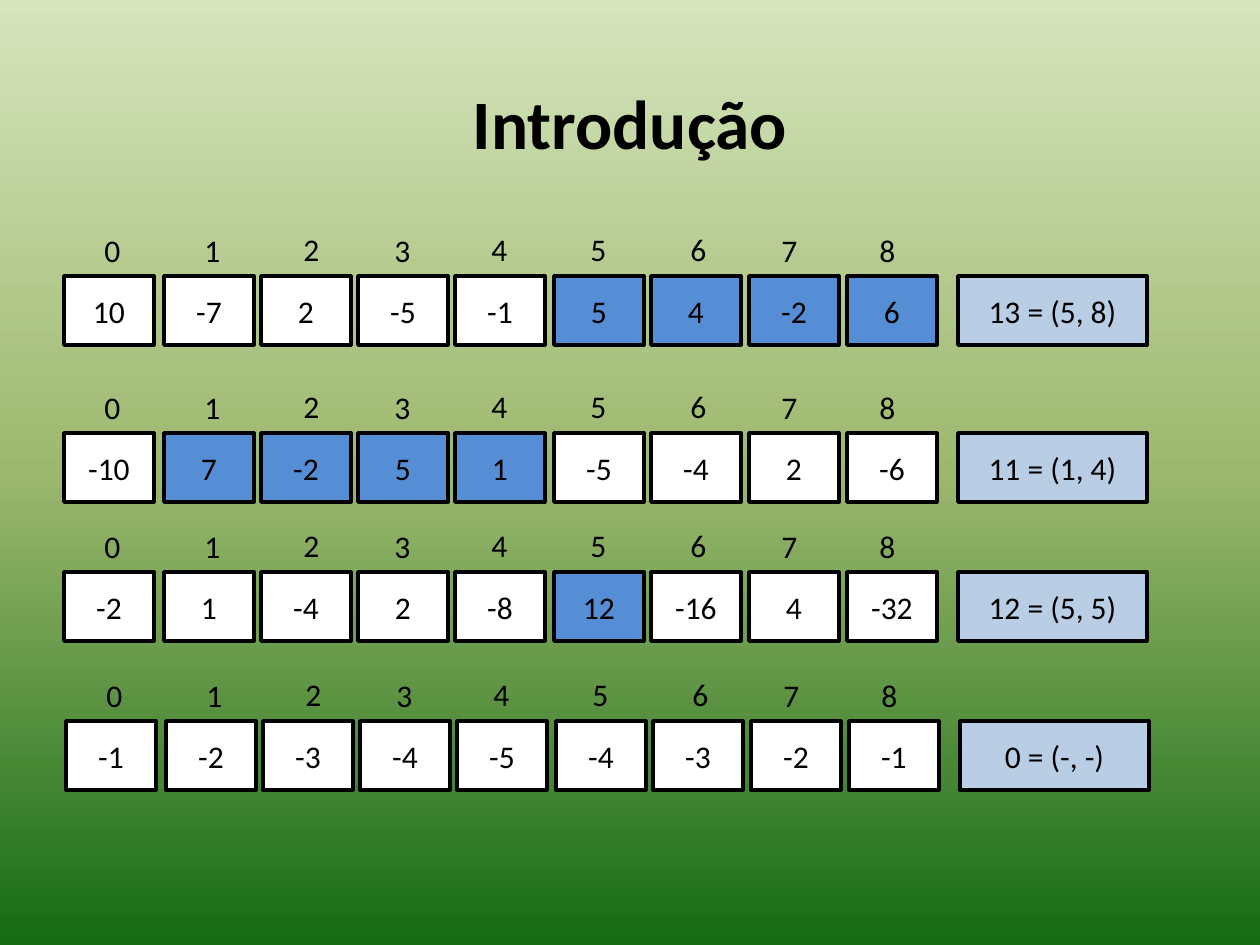
from copy import deepcopy

from pptx import Presentation
from pptx.dml.color import RGBColor
from pptx.enum.shapes import MSO_SHAPE
from pptx.enum.text import MSO_ANCHOR, MSO_AUTO_SIZE, PP_ALIGN
from pptx.util import Pt

RECTANGLE = MSO_SHAPE.RECTANGLE
MIDDLE = MSO_ANCHOR.MIDDLE
GROW = MSO_AUTO_SIZE.SHAPE_TO_FIT_TEXT
CENTER, LEFT = PP_ALIGN.CENTER, PP_ALIGN.LEFT

EMU_PER_PX = 914400 // 126
SLIDE_WIDTH, SLIDE_HEIGHT = 9144000, 6858000

COLORS = {
    "text": "000000",
    "cell": "FFFFFF",
    "chosen": "558ED5",
    "result": "B9CDE5",
    "sky": "D7E4BD",
    "meadow": "9CB86E",
    "forest": "156B13",
}
BACKGROUND_STOPS = [(0, "sky"), (0.5, "meadow"), (1, "forest")]

# Each column: cell left, index left, rise of the index above the cell
COLUMNS = [
    (64, 92, 51), (164, 192, 51), (261, 291, 52),
    (358, 382, 51), (455, 479, 52), (554, 578, 52),
    (651, 678, 52), (749, 769, 51), (847, 867, 51),
]
CELL_WIDTH, CELL_HEIGHT = 90, 69
INDEX_WIDTH, INDEX_HEIGHT = 42, 50
RESULT_LEFT, RESULT_WIDTH = 958, 189

# Each row: top, shift to the right, values, chosen columns, result
ROWS = [
    (276, 0, [10, -7, 2, -5, -1, 5, 4, -2, 6], range(5, 9), "13 = (5, 8)"),
    (433, 0, [-10, 7, -2, 5, 1, -5, -4, 2, -6], range(1, 5), "11 = (1, 4)"),
    (572, 0, [-2, 1, -4, 2, -8, 12, -16, 4, -32], range(5, 6), "12 = (5, 5)"),
    (721, 2, [-1, -2, -3, -4, -5, -4, -3, -2, -1], range(0), "0 = (-, -)"),
]


def px(length):
    return length * EMU_PER_PX


class SlideBuilder:
    font = "Calibri"
    text_size = 18
    title_size = 39.6
    line_width = 2

    def __init__(self, slide):
        self.slide = slide

    def color(self, name):
        return RGBColor.from_string(COLORS[name])

    def background(self, stops):
        fill = self.slide.background.fill
        fill.gradient()
        fill.gradient_angle = 270
        stop_list = self.slide.element.xpath(".//p:bg//a:gsLst")[0]
        stop_list.insert(1, deepcopy(stop_list[0]))
        for stop, (position, color) in zip(fill.gradient_stops, stops):
            stop.position = position
            stop.color.rgb = self.color(color)

    def add_text(self, frame, text, size, alignment, bold=False):
        paragraph = frame.paragraphs[0]
        paragraph.alignment = alignment
        run = paragraph.add_run()
        run.text = text
        run.font.name = self.font
        run.font.size = Pt(size)
        run.font.bold = bold
        run.font.color.rgb = self.color("text")

    def title(self, text, left, top, width, height):
        shape = self.slide.shapes.title
        shape.left, shape.top = px(left), px(top)
        shape.width, shape.height = px(width), px(height)
        frame = shape.text_frame
        frame.vertical_anchor = MIDDLE
        frame.margin_top, frame.margin_bottom = px(16), px(6)
        self.add_text(frame, text, self.title_size, CENTER, bold=True)

    def box(self, text, left, top, width, height, color):
        shape = self.slide.shapes.add_shape(
            RECTANGLE, px(left), px(top), px(width), px(height))
        shape.shadow.inherit = False
        shape.fill.solid()
        shape.fill.fore_color.rgb = self.color(color)
        shape.line.color.rgb = self.color("text")
        shape.line.width = Pt(self.line_width)
        shape.text_frame.vertical_anchor = MIDDLE
        self.add_text(shape.text_frame, text, self.text_size, CENTER)

    def label(self, text, left, top, width, height):
        shape = self.slide.shapes.add_textbox(
            px(left), px(top), px(width), px(height))
        frame = shape.text_frame
        frame.word_wrap = False
        frame.auto_size = GROW
        self.add_text(frame, text, self.text_size, LEFT)

    def array(self, top, shift, values, chosen, result):
        for index, (value, column) in enumerate(zip(values, COLUMNS)):
            cell_left, index_left, rise = column
            color = "chosen" if index in chosen else "cell"
            self.box(str(value), cell_left + shift, top,
                     CELL_WIDTH, CELL_HEIGHT, color)
            self.label(str(index), index_left + shift, top - rise,
                       INDEX_WIDTH, INDEX_HEIGHT)
        self.box(result, RESULT_LEFT + shift, top,
                 RESULT_WIDTH, CELL_HEIGHT, "result")


def main():
    presentation = Presentation()
    presentation.slide_width = SLIDE_WIDTH
    presentation.slide_height = SLIDE_HEIGHT
    title_only = presentation.slide_layouts.get_by_name("Title Only")
    builder = SlideBuilder(presentation.slides.add_slide(title_only))

    # Background and title
    builder.background(BACKGROUND_STOPS)
    builder.title("Introdução", 63, 38, 1134, 157)

    # Arrays with their maximum-sum segments
    for row in ROWS:
        builder.array(*row)

    presentation.save("out.pptx")


if __name__ == "__main__":
    main()
